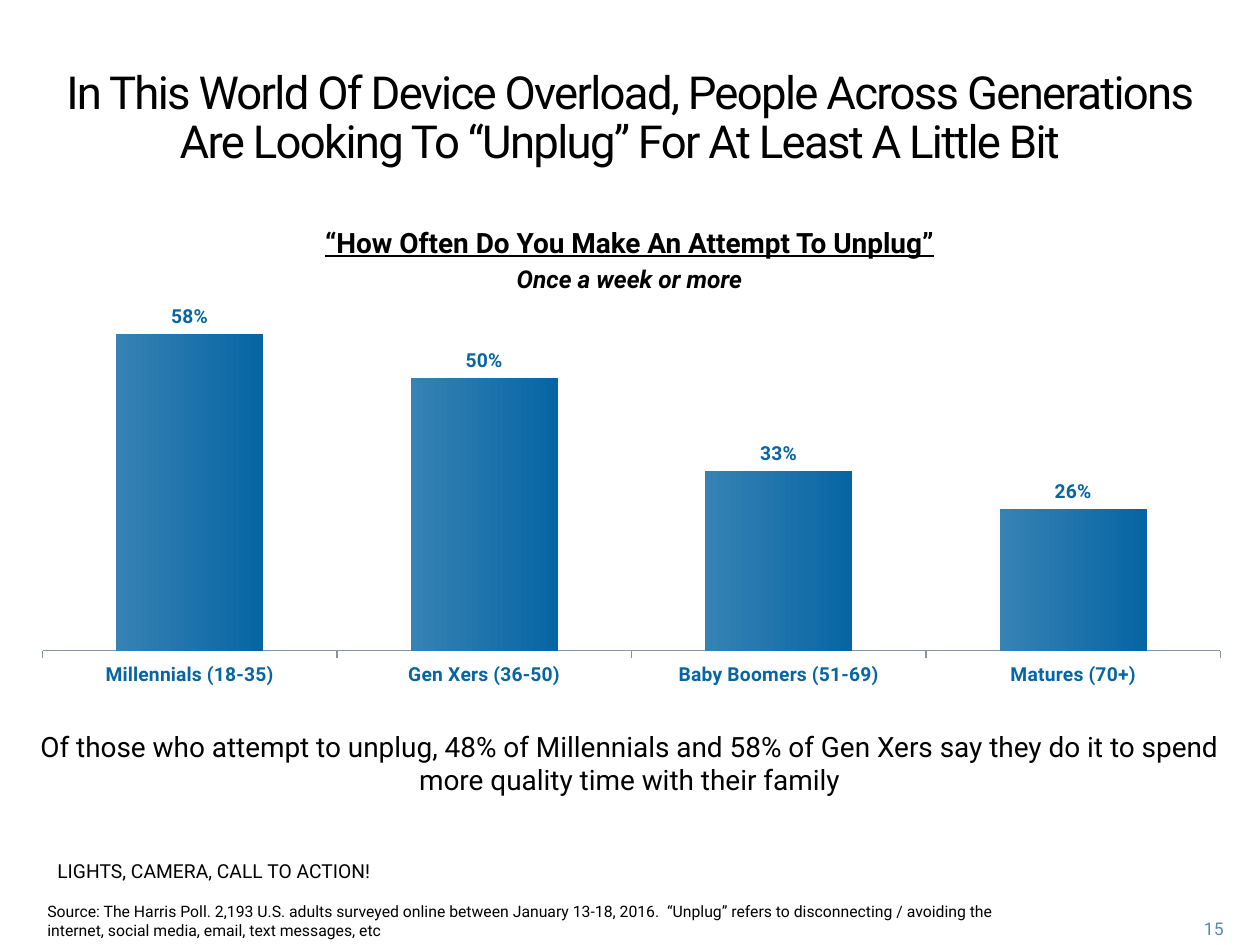
from dataclasses import dataclass

from lxml import etree
from pptx import Presentation
from pptx.chart.data import CategoryChartData
from pptx.dml.color import RGBColor
from pptx.enum.chart import XL_CHART_TYPE, XL_LABEL_POSITION, XL_TICK_MARK
from pptx.enum.text import MSO_ANCHOR, MSO_AUTO_SIZE, PP_ALIGN
from pptx.oxml.ns import qn
from pptx.util import Pt

COLUMN = XL_CHART_TYPE.COLUMN_CLUSTERED
ABOVE = XL_LABEL_POSITION.OUTSIDE_END
OUT, NO_TICK = XL_TICK_MARK.OUTSIDE, XL_TICK_MARK.NONE
TOP, FIXED = MSO_ANCHOR.TOP, MSO_AUTO_SIZE.NONE
LEFT, CENTER, RIGHT = PP_ALIGN.LEFT, PP_ALIGN.CENTER, PP_ALIGN.RIGHT
SCALE = 914400 / 126


@dataclass(frozen=True)
class Theme:
    face: str = "Roboto"
    ink: str = "000000"
    blue: str = "0765A3"
    light: str = "3682B4"
    axis: str = "8395A2"
    page: str = "508ABA"
    title: int = 26
    head: int = 16
    sub: int = 14
    label: int = 11
    note: int = 9
    number: int = 10


THEME = Theme()

RATES = {
    "Millennials (18-35)": 0.58,
    "Gen Xers (36-50)": 0.5,
    "Baby Boomers (51-69)": 0.33,
    "Matures (70+)": 0.26,
}


def px(*sizes):
    return [round(size * SCALE) for size in sizes]


def style(font, size, color=THEME.ink, bold=False):
    font.name = THEME.face
    font.size = Pt(size)
    font.bold = bold
    font.color.rgb = RGBColor.from_string(color)


def add_text(slide, box, text, size, align=LEFT, color=THEME.ink):
    frame = slide.shapes.add_textbox(*px(*box)).text_frame
    frame.word_wrap = True
    para = frame.paragraphs[0]
    para.text = text
    para.alignment = align
    style(para.font, size, color)
    return frame


def add_title(slide, box, text):
    title = slide.shapes.title
    title.left, title.top, title.width, title.height = px(*box)
    frame = title.text_frame
    frame.auto_size = FIXED
    frame.vertical_anchor = TOP
    para = frame.paragraphs[0]
    para.text = text
    para.alignment = CENTER
    para.line_spacing = Pt(28)
    style(para.font, THEME.title)
    para.runs[0]._r.get_or_add_rPr().set("spc", "-100")


def add_head(slide, box, text, sub):
    frame = add_text(slide, box, text, THEME.head, CENTER)
    font = frame.paragraphs[0].font
    font.bold = font.underline = True
    para = frame.add_paragraph()
    para.text = sub
    para.alignment = CENTER
    para.space_before = Pt(3)
    style(para.font, THEME.sub, bold=True)
    para.font.italic = True


def place_plot(chart, **parts):
    area = chart._chartSpace.chart.plotArea
    for old in area.findall(qn("c:layout")):
        area.remove(old)
    layout = etree.Element(qn("c:layout"))
    manual = etree.SubElement(layout, qn("c:manualLayout"))
    rules = {"layoutTarget": "inner", "xMode": "edge", "yMode": "edge", **parts}
    for name, value in rules.items():
        etree.SubElement(manual, qn("c:" + name)).set("val", str(value))
    area.insert(0, layout)


def add_bars(slide, box):
    data = CategoryChartData(number_format="0%")
    data.categories = list(RATES)
    data.add_series("Series 1", list(RATES.values()))
    chart = slide.shapes.add_chart(COLUMN, *px(*box), data).chart
    chart.has_legend = chart.has_title = False
    style(chart.font, 18)
    place_plot(chart, x=0.016, y=0.104, w=0.968, h=0.771)

    scale = chart.value_axis
    scale.minimum_scale, scale.maximum_scale = 0, 0.7
    scale.has_major_gridlines = False
    scale.visible = False

    groups = chart.category_axis
    groups.major_tick_mark, groups.minor_tick_mark = OUT, NO_TICK
    groups.format.line.color.rgb = RGBColor.from_string(THEME.axis)
    groups.format.line.width = Pt(0.75)
    style(groups.tick_labels.font, THEME.label, THEME.blue, True)

    plot = chart.plots[0]
    plot.gap_width, plot.overlap = 100, -20
    plot.vary_by_categories = False
    bars = plot.series[0]
    fill = bars.format.fill
    fill.gradient()
    fill.gradient_angle = 0
    for stop, color in zip(fill.gradient_stops, (THEME.light, THEME.blue)):
        stop.color.rgb = RGBColor.from_string(color)

    labels = bars.data_labels
    labels.show_value = True
    labels.position = ABOVE
    labels.number_format = "0%"
    labels.number_format_is_linked = False
    style(labels.font, THEME.label, THEME.blue, True)


def add_foot(slide, box):
    x, y, width, height = box
    add_text(slide, (x + 10, y, 388, 59),
             "LIGHTS, CAMERA, CALL TO ACTION!", THEME.label)
    add_text(slide, (x, y + 43, 1005, 33),
             "Source: The Harris Poll. 2,193 U.S. adults surveyed online between "
             "January 13-18, 2016.  “Unplug” refers to disconnecting / avoiding the "
             "internet, social media, email, text messages, etc", THEME.note)
    add_text(slide, (x + width - 77, y + height - 32, 77, 32),
             "15", THEME.number, RIGHT, THEME.page)


def main():
    deck = Presentation()
    deck.slide_width, deck.slide_height = px(1260, 945)
    slide = deck.slides.add_slide(deck.slide_layouts[5])
    add_title(slide, (23, 63, 1213, 176),
              "In This World Of Device Overload, People Across Generations "
              "Are Looking To “Unplug” For At Least A Little Bit  ")
    add_bars(slide, (23, 217, 1217, 496))
    add_head(slide, (23, 219, 1213, 50),
             "“How Often Do You Make An Attempt To Unplug”", "Once a week or more")
    add_text(slide, (23, 723, 1213, 91),
             "Of those who attempt to unplug, 48% of Millennials and 58% of Gen Xers "
             "say they do it to spend more quality time with their family",
             THEME.head, CENTER)
    add_foot(slide, (35, 853, 1201, 91))
    deck.save("out.pptx")


if __name__ == "__main__":
    main()
